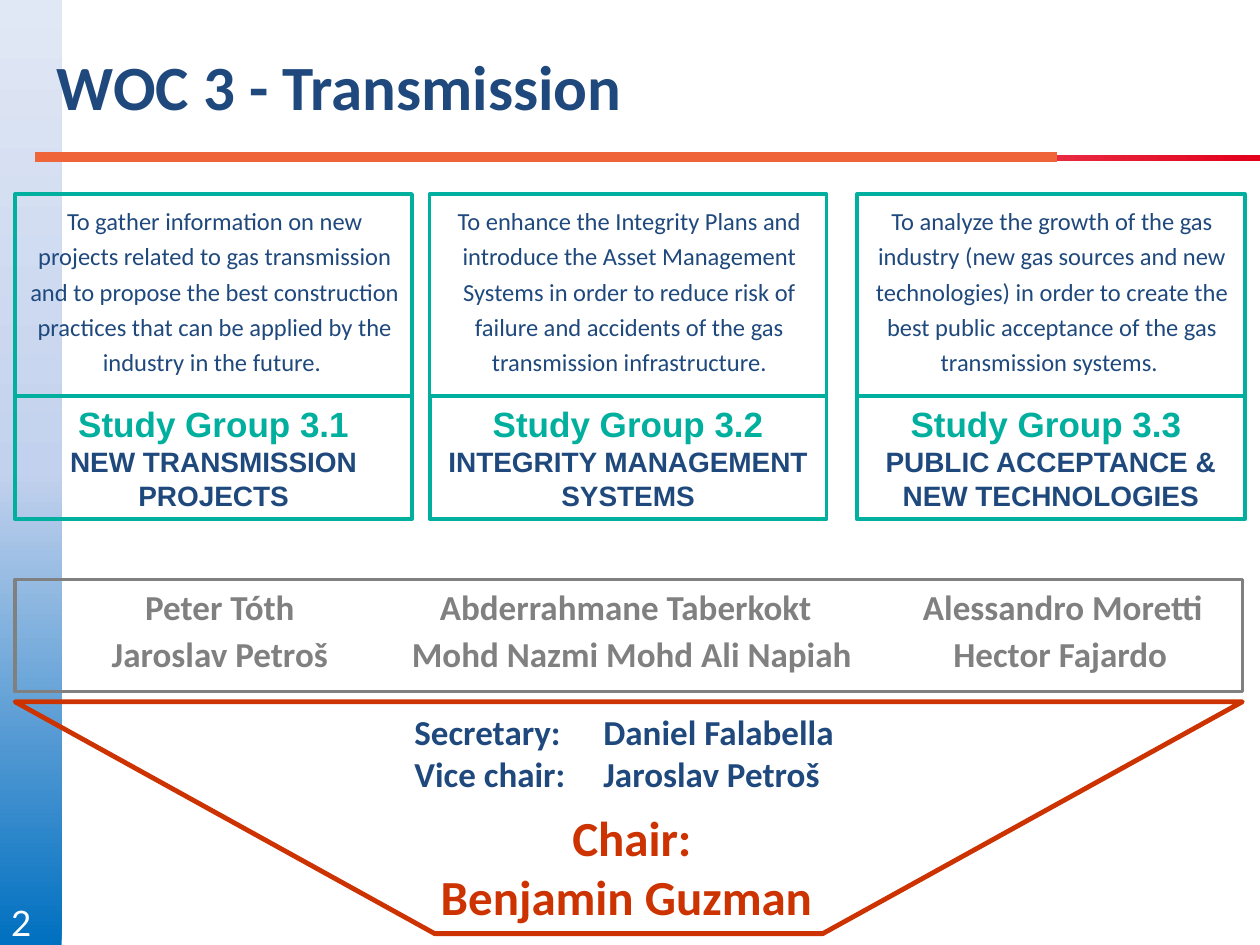
from dataclasses import dataclass
from typing import NamedTuple

from lxml.etree import SubElement
from pptx import Presentation
from pptx.dml.color import RGBColor
from pptx.enum.shapes import MSO_CONNECTOR, MSO_SHAPE
from pptx.enum.text import MSO_ANCHOR, PP_ALIGN
from pptx.oxml.ns import qn
from pptx.util import Inches, Pt

COLS, ROWS = 100, 75
CELL = Inches(0.1)

NAVY = RGBColor(0x1F, 0x49, 0x7D)
TEAL = RGBColor(0x00, 0xAF, 0x9D)
GRAY = RGBColor(0x80, 0x80, 0x80)
RUST = RGBColor(0xCC, 0x33, 0x00)
ORANGE = RGBColor(0xEF, 0x64, 0x38)
RED = RGBColor(0xE3, 0x00, 0x1B)
WHITE = RGBColor(0xFF, 0xFF, 0xFF)
BLUE = RGBColor(0x00, 0x70, 0xC0)
LIGHT = RGBColor(0xC2, 0xD1, 0xED)
PALE = RGBColor(0xE1, 0xE8, 0xF5)


class Box(NamedTuple):
    col: float
    row: float
    cols: float
    rows: float

    def emu(self) -> list[int]:
        return [round(n * CELL) for n in self]


class Line(NamedTuple):
    text: str
    size: float
    color: RGBColor
    bold: bool = True
    font: str = "Calibri"
    spacing: float = 1.0


class Member(NamedTuple):
    name: str
    col: float
    cols: float


@dataclass
class StudyGroup:
    col: float
    cols: float
    goal: str
    heading: str
    topic: str
    members: tuple[Member, Member]


GROUPS = [
    StudyGroup(1.2, 31.5,
               "To gather information on new projects related to gas transmission and to propose "
               "the best construction practices that can be applied by the industry in the future.\u00a0",
               "Study Group 3.1", "NEW TRANSMISSION PROJECTS",
               (Member("Peter Tóth", 2.2, 30.5), Member("Jaroslav Petroš", 2.2, 30.5))),
    StudyGroup(34.1, 31.5,
               "To enhance the Integrity Plans and introduce the Asset Management Systems in order "
               "to reduce risk of failure and accidents of the gas transmission infrastructure.",
               "Study Group 3.2", "INTEGRITY MANAGEMENT SYSTEMS",
               (Member("Abderrahmane Taberkokt", 31.9, 35.5),
                Member("Mohd Nazmi Mohd Ali Napiah", 31.1, 38.1))),
    StudyGroup(68, 30.8,
               "To analyze the growth of the gas industry (new gas sources and new technologies) "
               "in order to create the best public acceptance of the gas transmission systems. ",
               "Study Group 3.3 ", "PUBLIC ACCEPTANCE & NEW TECHNOLOGIES",
               (Member("Alessandro Moretti", 69.1, 30.5), Member("Hector Fajardo", 68.9, 30.5))),
]


def write(tf, lines: list[Line], align=PP_ALIGN.CENTER, wrap: bool = True) -> None:
    tf.word_wrap = wrap
    for i, line in enumerate(lines):
        p = tf.paragraphs[0] if i == 0 else tf.add_paragraph()
        p.text = line.text
        p.alignment = align
        p.line_spacing = line.spacing
        p.font.name = line.font
        p.font.size = Pt(line.size)
        p.font.bold = line.bold
        p.font.color.rgb = line.color


def add_text(slide, box: Box, lines: list[Line], align=PP_ALIGN.CENTER, wrap: bool = True) -> None:
    write(slide.shapes.add_textbox(*box.emu()).text_frame, lines, align, wrap)


def add_frame(slide, box: Box, color: RGBColor, width: float, kind=MSO_SHAPE.RECTANGLE):
    sp = slide.shapes.add_shape(kind, *box.emu())
    sp.shadow.inherit = False
    sp.fill.background()
    sp.line.color.rgb = color
    sp.line.width = Pt(width)
    return sp


def add_gradient(slide, box: Box, colors: list[RGBColor], angle: float) -> None:
    sp = slide.shapes.add_shape(MSO_SHAPE.RECTANGLE, *box.emu())
    sp.shadow.inherit = False
    sp.line.fill.background()
    sp.fill.gradient()
    sp.fill.gradient_angle = angle
    stops = next(sp._element.iter(qn("a:gsLst")))
    for stop in list(stops):
        stops.remove(stop)
    for i, color in enumerate(colors):
        stop = SubElement(stops, qn("a:gs"), pos=str(100000 * i // (len(colors) - 1)))
        SubElement(stop, qn("a:srgbClr"), val=str(color))


def add_rule(slide, col: float, end: float, row: float) -> None:
    x1, y1, x2, y2 = Box(col, row, end, row).emu()
    cx = slide.shapes.add_connector(MSO_CONNECTOR.STRAIGHT, x1, y1, x2, y2)
    cx.line.color.rgb = ORANGE
    cx.line.width = Pt(5.73)
    SubElement(cx._element.spPr, qn("a:effectLst"))


def add_title(slide, text: str) -> None:
    title = slide.shapes.title
    slide.shapes._spTree.append(title._element)
    title.left, title.top, title.width, title.height = Box(3.5, 0.5, 90, 12.5).emu()
    title.text_frame.vertical_anchor = MSO_ANCHOR.MIDDLE
    write(title.text_frame, [Line(text, 36, NAVY)], PP_ALIGN.LEFT)


def add_group(slide, group: StudyGroup) -> None:
    add_frame(slide, Box(group.col, 15.4, group.cols, 16), TEAL, 2)
    add_text(slide, Box(group.col + 0.1, 15.4, group.cols, 15.1),
             [Line(group.goal, 14, NAVY, bold=False, spacing=1.2)])
    sp = add_frame(slide, Box(group.col, 31.4, group.cols, 9.8), TEAL, 2.25)
    write(sp.text_frame, [Line(group.heading, 20, TEAL, font="Arial"),
                          Line(group.topic, 16, NAVY, font="Arial")])
    for i, member in enumerate(group.members):
        add_text(slide, Box(member.col, 46 + 3.7 * i, member.cols, 4.4),
                 [Line(member.name, 20, GRAY)])


def main() -> None:
    prs = Presentation()
    prs.slide_width, prs.slide_height = COLS * CELL, ROWS * CELL
    slide = prs.slides.add_slide(prs.slide_layouts[5])

    add_gradient(slide, Box(-0.4, 0, 5.3, ROWS), [BLUE, LIGHT, PALE], 90)
    add_gradient(slide, Box(5.9, 12.3, 94.1, 0.5), [RED, WHITE], 180)
    add_rule(slide, 2.8, 83.9, 12.45)
    add_title(slide, "WOC 3 - Transmission")
    add_text(slide, Box(-0.1, 72.2, 4.7, 2.8),
             [Line("2", 20, WHITE, bold=False, font="Lato", spacing=0.6)], PP_ALIGN.LEFT)

    for group in GROUPS:
        add_group(slide, group)
    add_frame(slide, Box(1.2, 46, 97.4, 8.9), GRAY, 2)

    add_text(slide, Box(31.9, 55.9, 40.9, 7.7),
             [Line("Secretary:\tDaniel Falabella", 20, NAVY),
              Line("Vice chair:\tJaroslav Petroš", 20, NAVY)], PP_ALIGN.LEFT)
    add_text(slide, Box(33.8, 63.6, 32.7, 10.4),
             [Line("Chair:", 28, RUST), Line("Benjamin Guzman ", 28, RUST)], wrap=False)
    funnel = add_frame(slide, Box(1.2, 55.7, 97.4, 18.4), RUST, 2.75, MSO_SHAPE.TRAPEZOID)
    funnel.adjustments[0] = 1.81
    funnel.rotation = 180

    prs.save("out.pptx")


if __name__ == "__main__":
    main()
